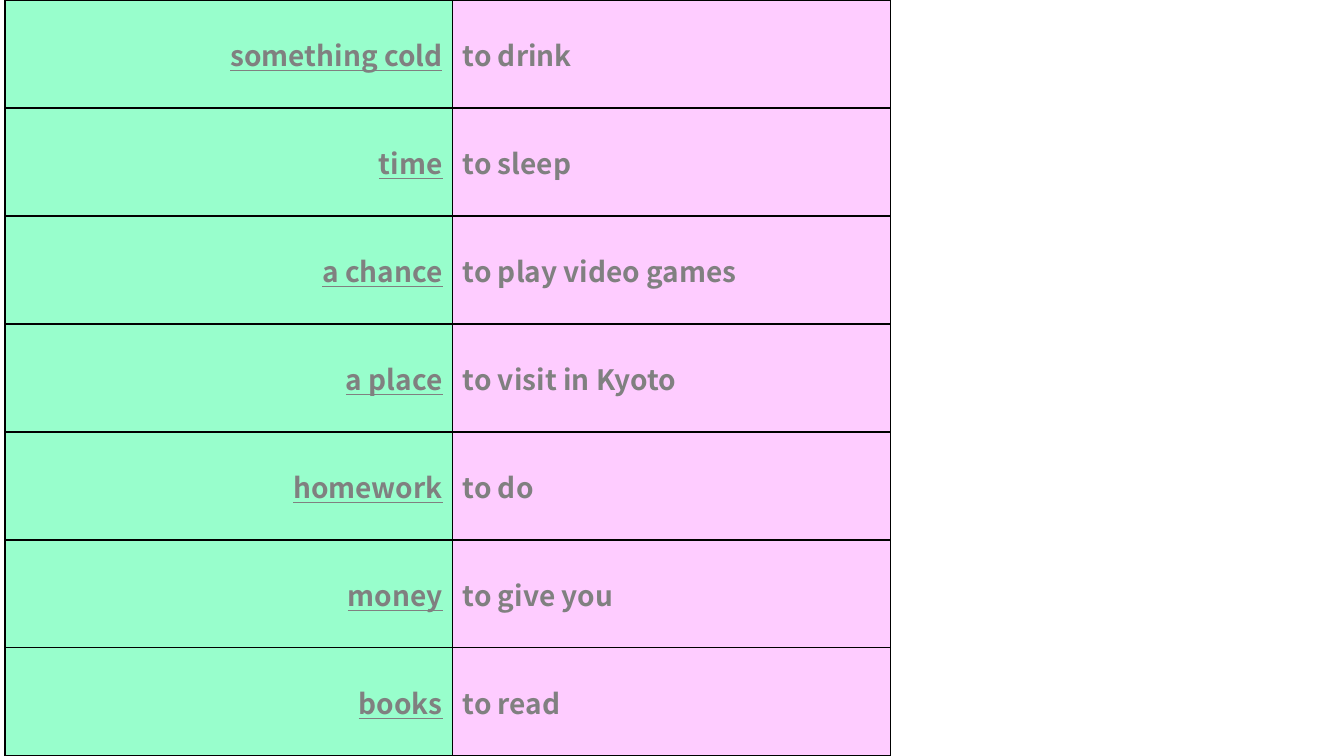
"""Build a slide that pairs noun phrases with infinitives."""
from dataclasses import dataclass

from lxml import etree
from pptx import Presentation, util as u
from pptx.dml.color import RGBColor
from pptx.enum import text
from pptx.oxml import ns


@dataclass(frozen=True)
class Theme:
    font: str = "Noto Sans CJK JP"
    size: int = 20
    ink: str = "808080"
    noun: str = "98FECC"
    verb: str = "FECCFF"
    rule: str = "000000"
    width: int = 1


PAIRS = [
    ("something cold", "to drink"),
    ("time", "to sleep"),
    ("a chance", "to play video games"),
    ("a place", "to visit in Kyoto"),
    ("homework", "to do"),
    ("money", "to give you"),
    ("books", "to read"),
]


def write(frame, words, *, theme, align, line=False):
    para = frame.paragraphs[0]
    para.alignment = align
    run = para.add_run()
    run.text = words
    font = run.font
    font.name = theme.font
    font.size = u.Pt(theme.size)
    font.bold = True
    font.underline = line
    font.color.rgb = RGBColor.from_string(theme.ink)


class Deck:
    def __init__(self, slide, theme):
        self.slide = slide
        self.theme = theme

    def border(self, cell):
        props = cell._tc.get_or_add_tcPr()
        for spot, side in enumerate("LRTB"):
            edge = etree.Element(ns.qn(f"a:ln{side}"), w=str(u.Pt(self.theme.width)))
            fill = etree.SubElement(edge, ns.qn("a:solidFill"))
            etree.SubElement(fill, ns.qn("a:srgbClr"), val=self.theme.rule)
            props.insert(spot, edge)

    def cell(self, cell, words, fill, **style):
        cell.fill.solid()
        cell.fill.fore_color.rgb = RGBColor.from_string(fill)
        cell.vertical_anchor = text.MSO_ANCHOR.MIDDLE
        write(cell.text_frame, words, theme=self.theme, **style)
        self.border(cell)

    def table(self, pairs, left, top, widths, height):
        frame = self.slide.shapes.add_table(
            len(pairs), len(widths), u.Inches(left), u.Inches(top),
            u.Inches(sum(widths)), u.Inches(height))
        grid = frame.table
        for col, width in zip(grid.columns, widths):
            col.width = u.Inches(width)
        for row, (noun, verb) in zip(grid.rows, pairs):
            row.height = u.Inches(height / len(pairs))
            self.cell(row.cells[0], noun, self.theme.noun,
                      align=text.PP_ALIGN.RIGHT, line=True)
            self.cell(row.cells[1], verb, self.theme.verb,
                      align=text.PP_ALIGN.LEFT)


def main():
    show = Presentation()
    show.slide_width = u.Inches(13.33)
    show.slide_height = u.Inches(7.5)
    deck = Deck(show.slides.add_slide(show.slide_layouts[6]), Theme())
    deck.table(PAIRS, 0.05, 0, (4.44, 4.34), 7.5)
    show.save("out.pptx")


if __name__ == "__main__":
    main()
